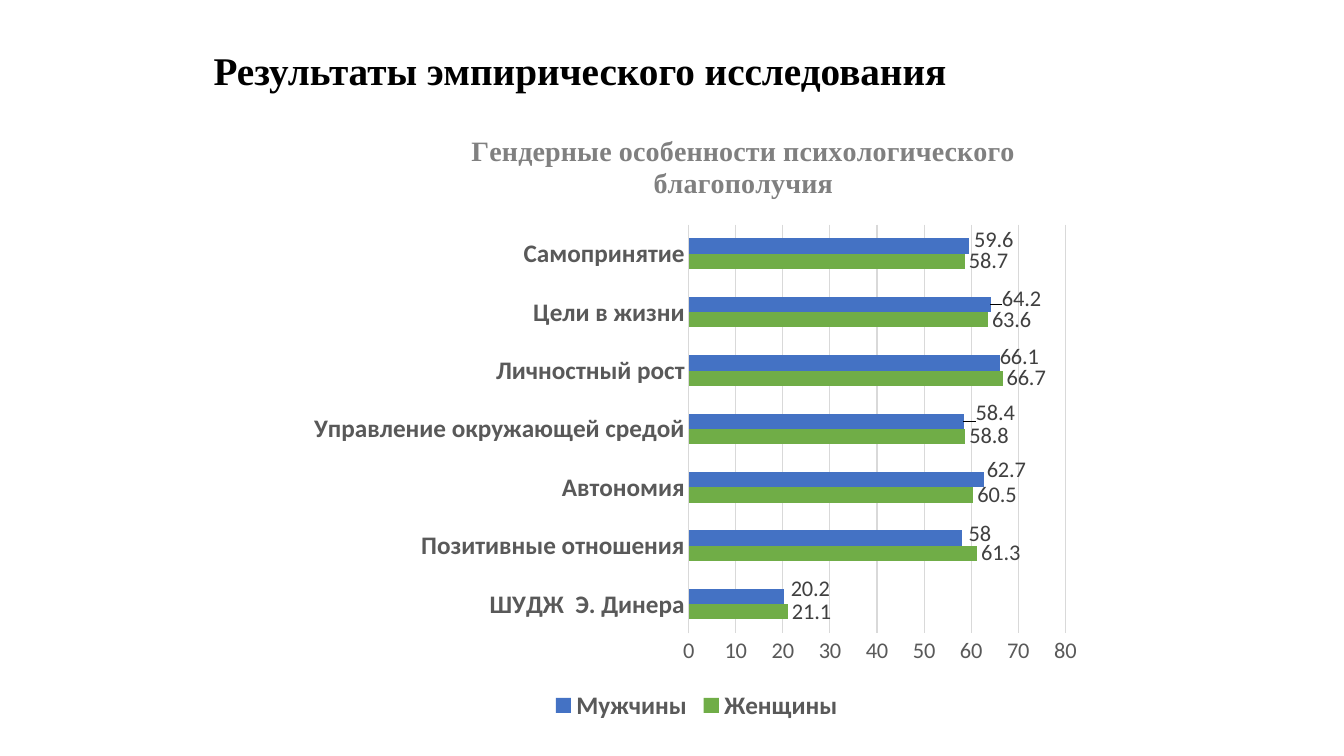
"""Build a slide with a bar chart of well-being scores by gender."""
from lxml.etree import SubElement
from pptx import Presentation
from pptx.chart.data import CategoryChartData
from pptx.dml.color import RGBColor
from pptx.enum.chart import XL_CHART_TYPE, XL_LABEL_POSITION, XL_LEGEND_POSITION, XL_TICK_MARK
from pptx.oxml.ns import qn
from pptx.util import Inches, Pt

HEAD = "Результаты эмпирического исследования"
TITLE = "Гендерные особенности психологического благополучия"
WOMEN, MEN = "Женщины", "Мужчины"
SCORES = [
    ("ШУДЖ  Э. Динера", 21.1, 20.2),
    ("Позитивные отношения", 61.3, 58),
    ("Автономия", 60.5, 62.7),
    ("Управление окружающей средой", 58.8, 58.4),
    ("Личностный рост", 66.7, 66.1),
    ("Цели в жизни", 63.6, 64.2),
    ("Самопринятие", 58.7, 59.6),
]
SHIFTS = [(0.03, -0.07), (0.03, -0.04), (-0.01, -0.09), (0.08, -0.08),
          (-0.04, -0.06), (0.07, -0.05), (0.01, -0.06)]
WIDE, HIGH = 7.88, 5.99

BLACK = RGBColor(0, 0, 0)
GRAY = RGBColor(0x80, 0x80, 0x80)
DARK = RGBColor(0x40, 0x40, 0x40)
TEXT = RGBColor(0x59, 0x59, 0x59)
LINE = RGBColor(0xD9, 0xD9, 0xD9)
GREEN = RGBColor(0x70, 0xAD, 0x47)
BLUE = RGBColor(0x44, 0x72, 0xC4)
SANS, SERIF = "Calibri", "Times New Roman"


def style(font, size, color, name=SANS, bold=False):
    font.size, font.name, font.bold = Pt(size), name, bold
    font.color.rgb = color


def place(node, index, **rules):
    for old in node.findall(qn("c:layout")):
        node.remove(old)
    layout = node.makeelement(qn("c:layout"))
    node.insert(index, layout)
    manual = SubElement(layout, qn("c:manualLayout"))
    for tag, value in rules.items():
        SubElement(manual, qn("c:" + tag)).set("val", str(value))


def add_head(slide):
    box = slide.shapes.add_textbox(Inches(2.02), Inches(0.41), Inches(9.26), Inches(0.57))
    frame = box.text_frame
    frame.word_wrap = True
    frame.text = HEAD
    style(frame.paragraphs[0].runs[0].font, 28, BLACK, SERIF, True)


def add_bars(slide):
    names, women, men = zip(*SCORES)
    data = CategoryChartData()
    data.categories = names
    data.add_series(WOMEN, women)
    data.add_series(MEN, men)
    chart = slide.shapes.add_chart(XL_CHART_TYPE.BAR_CLUSTERED, Inches(2.97), Inches(1.21),
                                   Inches(WIDE), Inches(HIGH), data).chart
    style(chart.font, 16, BLACK)
    chart.has_title = True
    frame = chart.chart_title.text_frame
    frame.text = TITLE
    style(frame.paragraphs[0].runs[0].font, 20, GRAY, SERIF, True)
    chart.has_legend = True
    chart.legend.position = XL_LEGEND_POSITION.BOTTOM
    chart.legend.include_in_layout = False
    style(chart.legend.font, 18, TEXT, bold=True)
    return chart


def set_axes(chart):
    cats, vals = chart.category_axis, chart.value_axis
    for axis, size, bold in ((cats, 18, True), (vals, 16, False)):
        axis.major_tick_mark = axis.minor_tick_mark = XL_TICK_MARK.NONE
        style(axis.tick_labels.font, size, TEXT, bold=bold)
    vals.minimum_scale, vals.maximum_scale, vals.major_unit = 0, 80, 10
    vals.format.line.fill.background()
    vals.has_major_gridlines = True
    for line in (cats.format.line, vals.major_gridlines.format.line):
        line.color.rgb = LINE
        line.width = Pt(0.75)


def set_bars(chart):
    plot = chart.plots[0]
    plot.gap_width, plot.overlap = 182, 0
    plot.vary_by_categories = False
    for series, color in zip(plot.series, (GREEN, BLUE)):
        series.format.fill.solid()
        series.format.fill.fore_color.rgb = color
        labels = series.data_labels
        labels.show_value = True
        labels.position = XL_LABEL_POSITION.OUTSIDE_END
        style(labels.font, 16, DARK)
    for i in range(len(SHIFTS)):
        label = plot.series[1].points[i].data_label
        style(label.font, 16, DARK)
        label.position = XL_LABEL_POSITION.OUTSIDE_END


def set_places(chart):
    root = chart._chartSpace
    place(root.find(".//" + qn("c:plotArea")), 0, layoutTarget="inner", xMode="edge",
          yMode="edge", x=0.49, y=0.17, w=0.474, h=0.677)
    place(root.find(".//" + qn("c:title")), 1, xMode="edge", yMode="edge", x=0.21, y=0.01)
    for label, (x, y) in zip(root.findall(".//" + qn("c:dLbl")), SHIFTS):
        place(label, 1, x=round(x / WIDE, 4), y=round(y / HIGH, 4))


def main():
    deck = Presentation()
    deck.slide_width, deck.slide_height = Inches(13.33), Inches(7.5)
    slide = deck.slides.add_slide(deck.slide_layouts[6])
    add_head(slide)
    chart = add_bars(slide)
    set_axes(chart)
    set_bars(chart)
    set_places(chart)
    deck.save("out.pptx")


if __name__ == "__main__":
    main()
